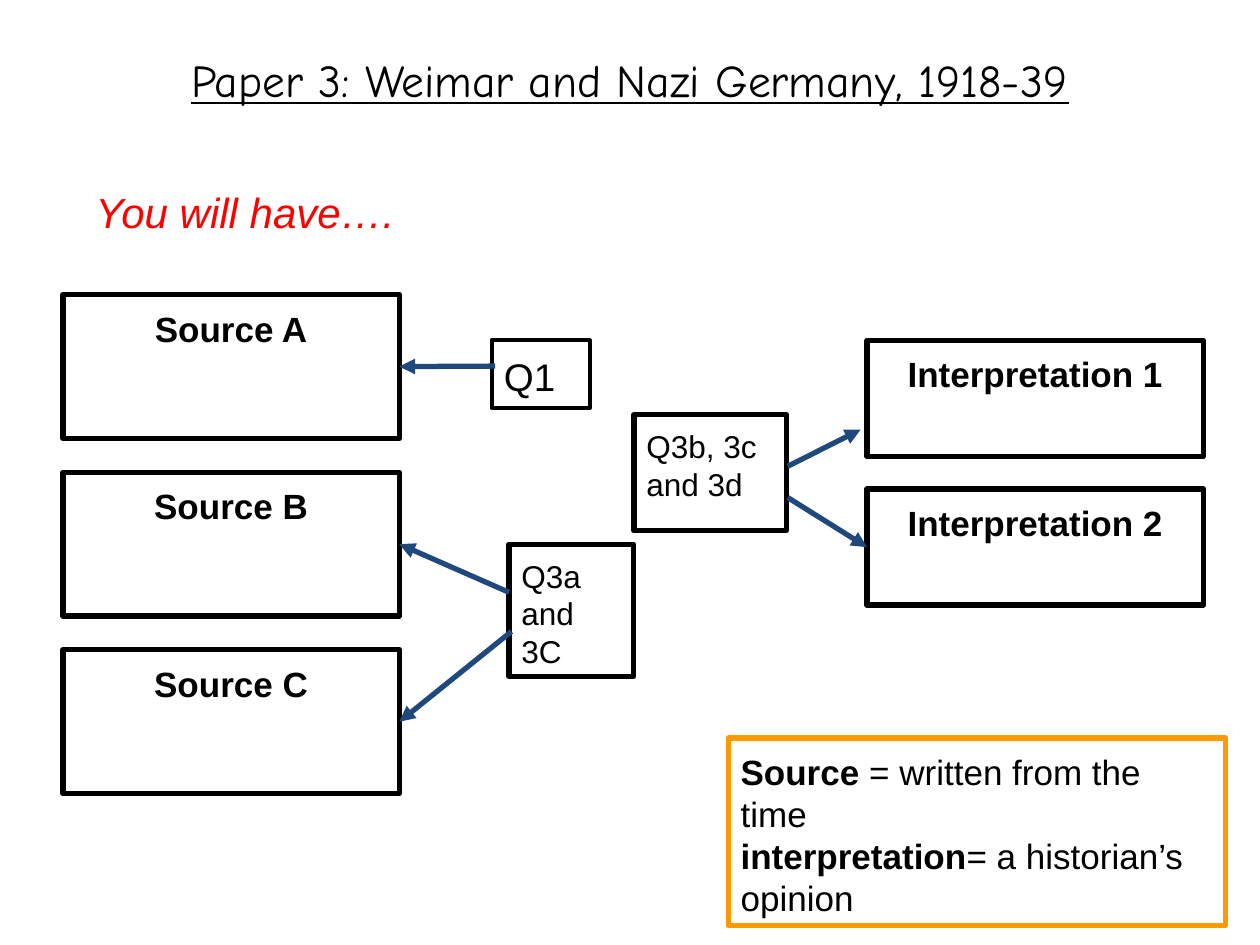
import pptx
import pptx.dml.color
import pptx.enum.shapes
import pptx.enum.text
import pptx.oxml.ns
import pptx.util
from lxml import etree

Cm, Pt = pptx.util.Cm, pptx.util.Pt
ALIGN = pptx.enum.text.PP_ALIGN
ANCHOR = pptx.enum.text.MSO_ANCHOR
RECTANGLE = pptx.enum.shapes.MSO_SHAPE.RECTANGLE
STRAIGHT = pptx.enum.shapes.MSO_CONNECTOR.STRAIGHT
LEFT_SIDE, RIGHT_SIDE = 1, 3

COLOURS = {"text": "000000", "lead": "FF0000", "arrow": "1F497D", "key": "FF9900"}


def colour(name):
    return pptx.dml.color.RGBColor.from_string(COLOURS[name])


def add_span(para, text, tint="text", **values):
    span = para.add_run()
    span.text = text
    span.font.color.rgb = colour(tint)
    for name, value in {"name": "Arial", **values}.items():
        setattr(span.font, name, value)


def format_frame(frame, margin=0.25):
    values = {"word_wrap": True, "vertical_anchor": ANCHOR.TOP}
    for side in ("left", "right", "top", "bottom"):
        values[f"margin_{side}"] = Cm(margin)
    for name, value in values.items():
        setattr(frame, name, value)


def add_title(page, text):
    title = page.shapes.title
    title.left, title.top, title.width, title.height = Cm(1.27), Cm(0), Cm(22.86), Cm(3.18)
    title.text_frame.vertical_anchor = ANCHOR.MIDDLE
    para = title.text_frame.paragraphs[0]
    para.alignment = ALIGN.CENTER
    add_span(para, text, name="Comic Neue", size=Pt(26), underline=True)


def add_label(page, text, *place):
    label = page.shapes.add_textbox(*map(Cm, place))
    format_frame(label.text_frame)
    add_span(label.text_frame.paragraphs[0], text, "lead", size=Pt(24), italic=True)


def add_box(page, place, lines, size, align=ALIGN.LEFT, border="text", weight=3):
    """Draw an outlined box; each line is a list of (text, bold) spans."""
    box = page.shapes.add_shape(RECTANGLE, *map(Cm, place))
    box.shadow.inherit = False
    box.fill.background()
    box.line.color.rgb = colour(border)
    box.line.width = Pt(weight)
    frame = box.text_frame
    format_frame(frame)
    for number, spans in enumerate(lines):
        para = frame.add_paragraph() if number else frame.paragraphs[0]
        para.alignment = align
        for text, bold in spans:
            add_span(para, text, size=Pt(size), bold=bold)
    return box


def add_stack(page, names, left, top, height, step):
    return [
        add_box(page, (left, top + row * step, 6.78, height), [[(name, True)]], 20, ALIGN.CENTER)
        for row, name in enumerate(names)
    ]


def add_arrow(page, start, end=(0, 0), target=None, side=None):
    arrow = page.shapes.add_connector(STRAIGHT, *map(Cm, (*start, *end)))
    if target is not None:
        arrow.end_connect(target, side)
    arrow.line.color.rgb = colour("arrow")
    arrow.line.width = Pt(3)
    qn = pptx.oxml.ns.qn
    etree.SubElement(arrow.line._get_or_add_ln(), qn("a:tailEnd"), type="triangle")
    etree.SubElement(arrow._element.spPr, qn("a:effectLst"))


def main():
    deck = pptx.Presentation()
    deck.slide_width, deck.slide_height = Cm(25.4), Cm(19.05)
    page = deck.slides.add_slide(deck.slide_layouts[5])

    # Headings
    add_title(page, "Paper 3: Weimar and Nazi Germany, 1918-39")
    add_label(page, "You will have….", 1.68, 3.51, 7.92, 1.37)

    # Exam material
    sources = add_stack(page, ["Source A", "Source B", "Source C"], 1.27, 5.94, 2.9, 3.58)
    interpretations = add_stack(
        page, ["Interpretation 1", "Interpretation 2"], 17.48, 6.86, 2.34, 3)

    # Questions
    add_box(page, (9.91, 6.86, 1.98, 1.37), [[("Q1", False)]], 22, weight=2.25)
    add_box(page, (10.26, 10.97, 2.51, 2.67), [[("Q3a and 3C", False)]], 18)
    add_box(page, (12.78, 8.36, 3.07, 2.34), [[("Q3b, 3c and 3d", False)]], 18)

    # Arrows from questions to material
    starts = [(9.98, 7.38), (10.26, 11.94), (10.31, 12.73)]
    for start, source in zip(starts, sources):
        add_arrow(page, start, target=source, side=RIGHT_SIDE)
    add_arrow(page, (15.88, 9.4), (17.35, 8.66))
    add_arrow(page, (15.88, 10.03), target=interpretations[1], side=LEFT_SIDE)

    # Key to the terms
    key_lines = [
        [("Source", True), (" = written from the time", False)],
        [("interpretation", True), ("= a historian’s opinion", False)],
    ]
    add_box(page, (14.68, 14.88, 10.03, 3.78), key_lines, 20, border="key")

    deck.save("out.pptx")


if __name__ == "__main__":
    main()
